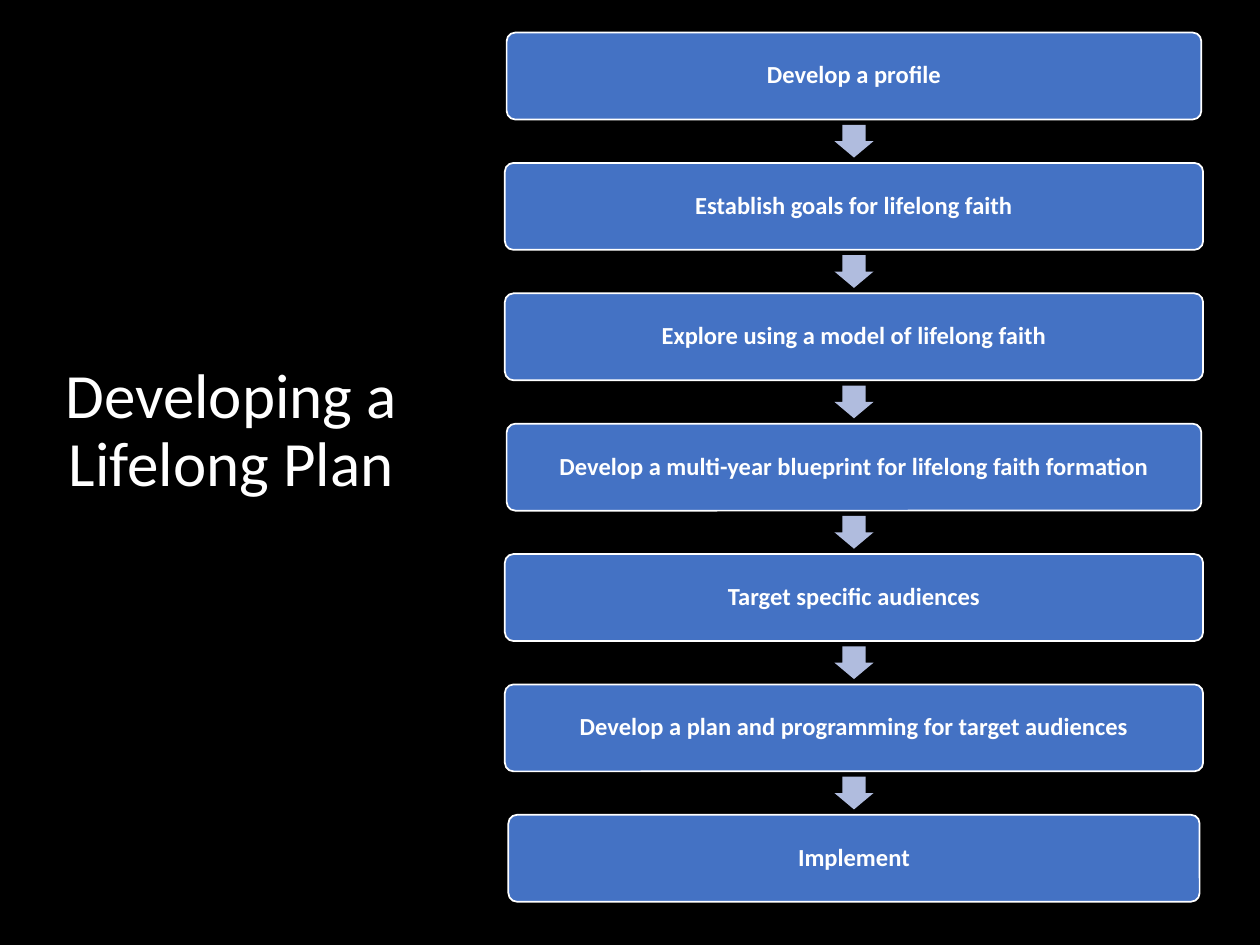
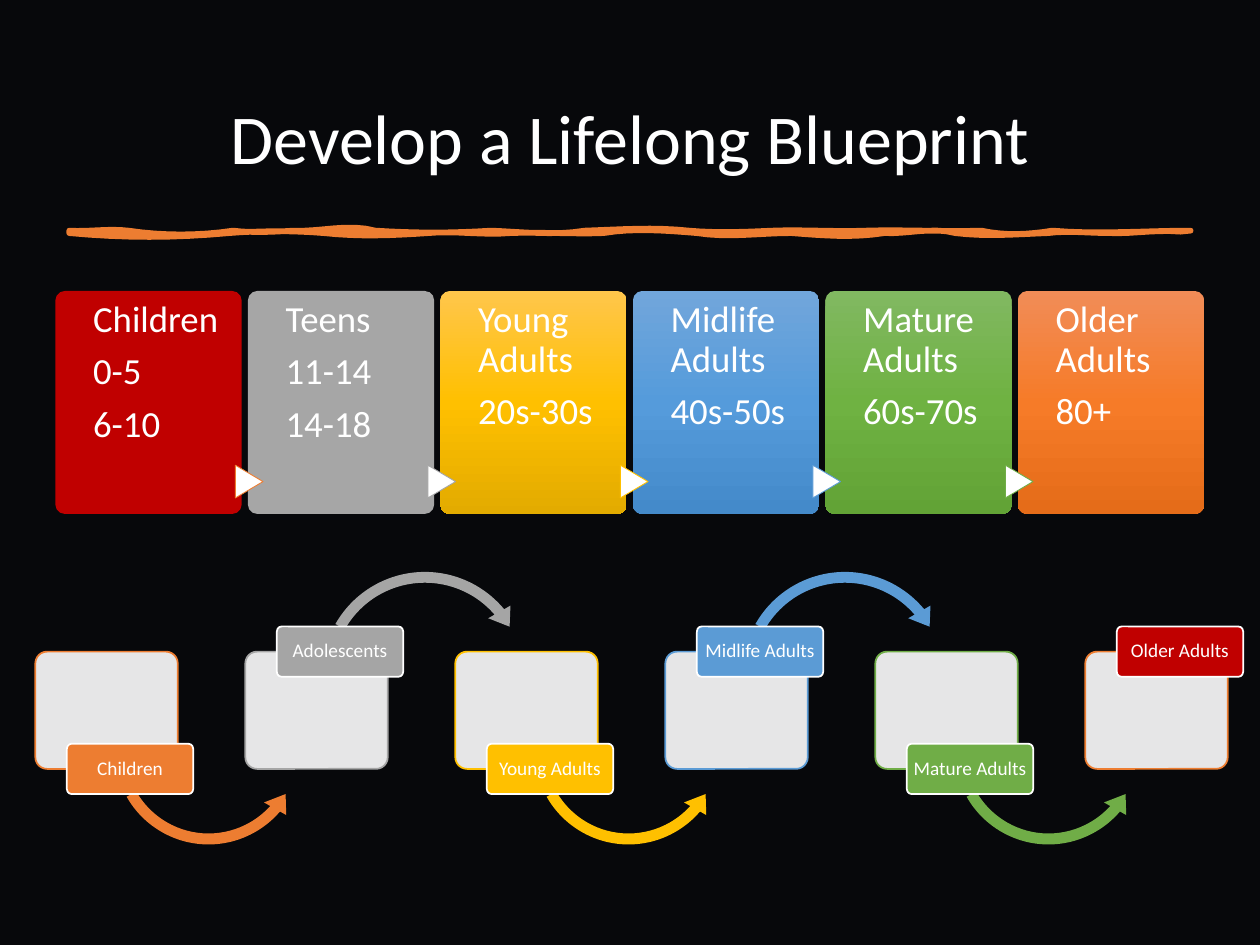
"""Build two slides on planning lifelong faith formation."""
from copy import deepcopy

from lxml import etree
from pptx import Presentation
from pptx.dml.color import RGBColor
from pptx.enum.shapes import MSO_SHAPE
from pptx.enum.text import MSO_ANCHOR, MSO_AUTO_SIZE, PP_ALIGN
from pptx.oxml.ns import qn
from pptx.util import Pt

FONT = "Calibri"
BLACK = RGBColor(0x00, 0x00, 0x00)
NIGHT = RGBColor(0x07, 0x08, 0x0B)
WHITE = RGBColor(0xFF, 0xFF, 0xFF)
STEP_BLUE = RGBColor(0x44, 0x72, 0xC4)
PALE_BLUE = RGBColor(0xB0, 0xBC, 0xDE)
RED = RGBColor(0xC0, 0x00, 0x00)
ORANGE = RGBColor(0xED, 0x7D, 0x31)
GRAY = RGBColor(0xA5, 0xA5, 0xA5)
CARD_GRAY = RGBColor(0xA6, 0xA6, 0xA6)
GOLD = RGBColor(0xFF, 0xC0, 0x00)
BLUE = RGBColor(0x5B, 0x9B, 0xD5)
GREEN = RGBColor(0x70, 0xAD, 0x47)
GOLD_FADE = [RGBColor(0xFF, 0xC6, 0x4B), GOLD, RGBColor(0xE3, 0xAB, 0x00)]
BLUE_FADE = [RGBColor(0x71, 0xA6, 0xDB), RGBColor(0x55, 0x9B, 0xDB), RGBColor(0x44, 0x8A, 0xCA)]
GREEN_FADE = [RGBColor(0x81, 0xB8, 0x61), RGBColor(0x6F, 0xB2, 0x42), RGBColor(0x62, 0xA3, 0x36)]
ORANGE_FADE = [RGBColor(0xF1, 0x8C, 0x57), RGBColor(0xF6, 0x7B, 0x28), RGBColor(0xE5, 0x6C, 0x19)]

STEPS = [
    ("Develop a profile", 397),
    ("Establish goals for lifelong faith", 399),
    ("Explore using a model of lifelong faith", 399),
    ("Develop a multi-year blueprint for lifelong faith formation", 397),
    ("Target specific audiences", 399),
    ("Develop a plan and programming for target audiences", 399),
    ("Implement", 395),
]
AGE_CARDS = [
    (["Children", "0-5", "6-10"], [RED]),
    (["Teens", "11-14", "14-18"], [CARD_GRAY]),
    (["Young Adults", "20s-30s"], GOLD_FADE),
    (["Midlife Adults", "40s-50s"], BLUE_FADE),
    (["Mature Adults", "60s-70s"], GREEN_FADE),
    (["Older Adults", "80+"], ORANGE_FADE),
]
STAGES = [
    ("Children", ORANGE, ORANGE),
    ("Adolescents", GRAY, GRAY),
    ("Young Adults", GOLD, GOLD),
    ("Midlife Adults", BLUE, BLUE),
    ("Mature Adults", GREEN, GREEN),
    ("Older Adults", RED, ORANGE),
]
STROKE_START = 39.6
STROKE_EDGES = [
    (131.8, [(73.4, .7, -1.4), (133.2, 2.9, 2.9), (167.8, 1.4, .7), (214.6, .7, -4.3),
             (280.8, 1.4, 1.4), (334.1, .7, 2.9), (393.8, -.7, -2.2), (441.4, 1.4, .7),
             (494.6, -.7, .7), (560.9, -.7, .7), (601.2, 2.9, 2.2), (680.4, 2.2, 0)]),
    (133.2, [(633.6, -2.9, .7), (599, 0, -1.4), (545.8, .7, 2.2), (505.4, -3.6, .7),
             (452.2, 2.9, 1.4), (398.2, 0, 2.9), (344.9, -1.4, -2.9), (291.6, .7, -.7),
             (244.8, 1.4, -1.4), (185, 1.4, 2.2), (131, -1.4, -1.4), (39.6, 2.9, 2.9)]),
]


def paint(shape, fades, outline=None, weight=1):
    """Fill a shape with one colour or a downward three-stop fade."""
    shape.shadow.inherit = False
    if len(fades) == 1:
        shape.fill.solid()
        shape.fill.fore_color.rgb = fades[0]
    else:
        shape.fill.gradient()
        shape.fill.gradient_angle = 270
        stops = shape._element.spPr.find(qn("a:gradFill")).find(qn("a:gsLst"))
        stops.append(deepcopy(stops[0]))
        for stop, color, position in zip(shape.fill.gradient_stops, fades, (0, .5, 1)):
            stop.color.rgb = color
            stop.position = position
    if outline is None:
        shape.line.fill.background()
    else:
        shape.line.color.rgb = outline
        shape.line.width = Pt(weight)


def add_part(slide, preset, box, fades, outline=None, weight=1, adjustments=()):
    """Add a painted preset shape at a box given in points."""
    part = slide.shapes.add_shape(preset, *map(Pt, box))
    for index, value in enumerate(adjustments):
        part.adjustments[index] = value
    paint(part, fades, outline, weight)
    return part


def write(shape, lines, size, insets, bold=False, align=PP_ALIGN.CENTER, anchor=MSO_ANCHOR.MIDDLE):
    """Write white paragraphs into a shape."""
    frame = shape.text_frame
    frame.word_wrap = True
    frame.auto_size = MSO_AUTO_SIZE.NONE
    frame.vertical_anchor = anchor
    frame.margin_left, frame.margin_top, frame.margin_right, frame.margin_bottom = map(Pt, insets)
    frame.text = "\n".join(lines)
    for index, paragraph in enumerate(frame.paragraphs):
        paragraph.alignment = align
        paragraph.line_spacing = .9
        paragraph.space_before = Pt(7.35 if index else 0)
        paragraph.font.name = FONT
        paragraph.font.size = Pt(size)
        paragraph.font.bold = bold
        paragraph.font.color.rgb = WHITE


def add_titled_slide(deck, title, box, size, background):
    """Add a title-only slide with a dark background."""
    slide = deck.slides.add_slide(deck.slide_layouts[5])
    slide.background.fill.solid()
    slide.background.fill.fore_color.rgb = background
    heading = slide.shapes.title
    heading.left, heading.top, heading.width, heading.height = map(Pt, box)
    write(heading, [title], size, (7.2, 3.6, 7.2, 3.6))
    return slide


def add_steps(slide):
    """Stack the steps with an arrow in each gap."""
    center, top, height, pitch = 488, 18.6, 49.7, 74.5
    arrow_width, arrow_height = 22.3, 18.7
    for index, (step, width) in enumerate(STEPS):
        y = top + index * pitch
        if index:
            arrow_top = y - (pitch - height + arrow_height) / 2
            add_part(slide, MSO_SHAPE.DOWN_ARROW,
                     (center - arrow_width / 2, arrow_top, arrow_width, arrow_height),
                     [PALE_BLUE], adjustments=(.6, .5))
        box = add_part(slide, MSO_SHAPE.ROUNDED_RECTANGLE,
                       (center - width / 2, y, width, height), [STEP_BLUE], WHITE,
                       adjustments=(.1,))
        write(box, [step], 14, (4, 4, 4, 4), bold=True)


def add_brush_stroke(slide):
    """Draw the wavy rule under the title from sampled cubic curves."""
    points, x = [], STROKE_START
    for base, waves in STROKE_EDGES:
        for end, first, second in waves:
            for t in (i / 8 for i in range(1, 9)):
                rise = 3 * t * (1 - t) ** 2 * first + 3 * t * t * (1 - t) * second
                points.append((Pt(x + (end - x) * t), Pt(base + rise)))
            x = end
    builder = slide.shapes.build_freeform(Pt(STROKE_START), Pt(STROKE_EDGES[0][0]))
    builder.add_line_segments(points, close=True)
    paint(builder.convert_to_shape(), [ORANGE], ORANGE, 3.25)


def add_age_cards(slide):
    """Lay out the age cards with a pointer between neighbours."""
    left, top, width, height, pitch = 31.7, 166.3, 106.4, 127.4, 110
    pointer_width, pointer_height, pointer_top = 18.7, 15.8, 267.3
    pointer_lines = [ORANGE, GRAY, GOLD, BLUE, GREEN]
    for index, (lines, fades) in enumerate(AGE_CARDS):
        x = left + index * pitch
        card = add_part(slide, MSO_SHAPE.ROUNDED_RECTANGLE, (x, top, width, height), fades,
                        adjustments=(.05,))
        write(card, lines, 21, (20, 4, 4, 0), align=PP_ALIGN.LEFT, anchor=MSO_ANCHOR.TOP)
        if index:
            pointer = add_part(slide, MSO_SHAPE.FLOWCHART_EXTRACT,
                               (x + .7 - pointer_width / 2, pointer_top,
                                pointer_width, pointer_height),
                               [WHITE], pointer_lines[index - 1], .5)
            pointer.rotation = 90


def add_stages(slide):
    """Lay out the life stages, with labels and arrows alternating below and above."""
    left, top, width, height, pitch = 20.2, 372.4, 81.4, 67, 120
    below = (MSO_SHAPE.LEFT_CIRCULAR_ARROW, 41, 370.8, 115.9, (.054, 6.995, 24.75, 90.245, .063), 425)
    above = (MSO_SHAPE.CIRCULAR_ARROW, 39.6, 322.6, 126, (.049, 6.347, 191.898, 125.755, .058), 358)
    for index, (stage, color, outline) in enumerate(STAGES):
        x = left + index * pitch
        preset, shift, arrow_top, size, bend, label_top = above if index % 2 else below
        box = add_part(slide, MSO_SHAPE.ROUNDED_RECTANGLE, (x, top, width, height), [WHITE], outline,
                       adjustments=(.1,))
        white = box._element.spPr.find(qn("a:solidFill"))[0]
        etree.SubElement(white, qn("a:alpha")).set("val", "90000")
        if index < len(STAGES) - 1:
            add_part(slide, preset, (x + shift, arrow_top, size, size), [color], adjustments=bend)
        label = add_part(slide, MSO_SHAPE.ROUNDED_RECTANGLE, (x + 18, label_top, 72.2, 28.8),
                         [color], WHITE, adjustments=(.1,))
        write(label, [stage], 11, (1.4, 1.4, 1.4, 1.4))


def main():
    """Build and save the deck."""
    deck = Presentation()
    deck.slide_width, deck.slide_height = Pt(720), Pt(540)
    plan = add_titled_slide(deck, "Developing a Lifelong Plan", (23.8, 50.4, 216.7, 393.6), 36, BLACK)
    add_steps(plan)
    blueprint = add_titled_slide(deck, "Develop a Lifelong Blueprint", (49.7, 28.8, 620.6, 104.4), 40, NIGHT)
    add_brush_stroke(blueprint)
    add_age_cards(blueprint)
    add_stages(blueprint)
    deck.save("out.pptx")


if __name__ == "__main__":
    main()
